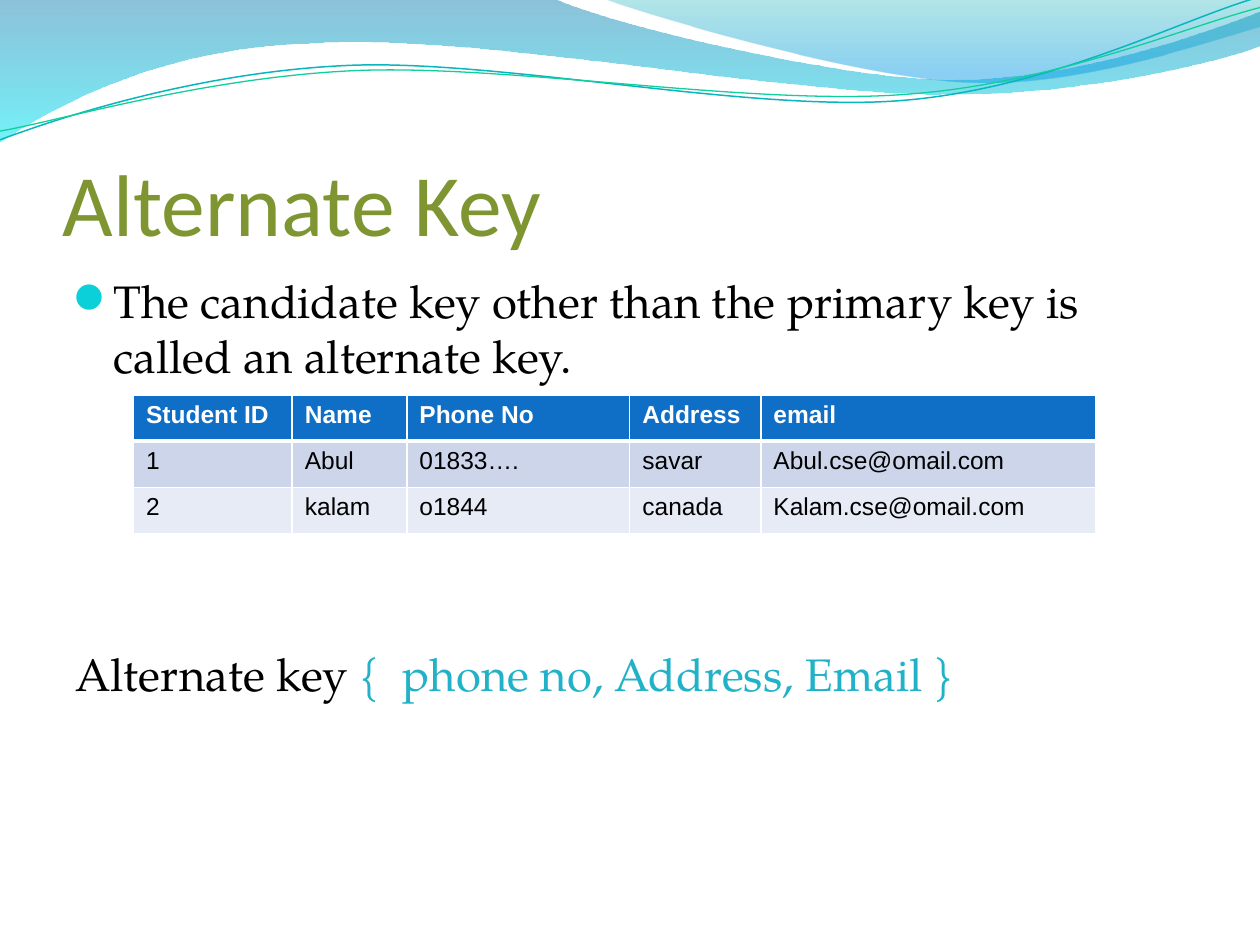
from lxml.etree import SubElement
from pptx import Presentation
from pptx.dml.color import RGBColor
from pptx.enum.text import MSO_ANCHOR
from pptx.oxml import parse_xml
from pptx.oxml.ns import nsdecls, qn
from pptx.util import Pt

# Outlines: two numbers are a point, six numbers a cubic curve.
WAVE_BAND = [(0, 0), (316.8, -0.7),
             (342.7, 12.2, 478.1, 45.4, 545.8, 45.4),
             (614.2, 45.4, 689.8, 18.7, 720, 6.5), (720.7, 25.9),
             (707.8, 31.7, 626.4, 54.7, 537.1, 54),
             (447.8, 54, 275, 20.2, 185, 24.5),
             (92.9, 25.9, 33.1, 59.8, -0.7, 81.4)]
WAVE_CORNER = [(344.9, -0.7), (366.5, 7.9, 491, 44.6, 553.7, 46.8),
               (616.3, 49.7, 691.9, 23, 720, 15.1), (720, 0)]
WAVE_LINES = [
    ("09B6BE", 0.85, [(0, 79.9), (34.6, 67, 113.8, 41, 199.4, 37.4),
                      (284.4, 33.8, 427, 64.1, 513.4, 57.6),
                      (599.8, 51.1, 675.4, 10.8, 718.6, -1.4)]),
    ("10CF9B", 0.75, [(0, 74.9), (33.8, 69.1, 118.1, 43.9, 203.8, 40.3),
                      (290.2, 36.7, 429.8, 60.5, 516.2, 54),
                      (601.9, 48.2, 677.5, 15.1, 720, 4.3)]),
]
STUDENTS = [
    ("Student ID", "Name", "Phone No", "Address", "email"),
    ("1", "Abul", "01833….", "savar", "Abul.cse@omail.com"),
    ("2", "kalam", "o1844", "canada", "Kalam.cse@omail.com"),
]
COLUMN_WIDTHS = (90.7, 65.5, 127.4, 74.9, 191.5)


def rgb(value):
    return RGBColor.from_string(value)


class SlideBuilder:
    TITLE_FONT, BODY_FONT, TABLE_FONT = "Calibri", "TeX Gyre Pagella", "Arial"
    TITLE, TEXT, ACCENT, BULLET = "7E9532", "000000", "21B2C8", "0BD0D9"
    WHITE = "FFFFFF"
    ROW_FILLS = ("0F6FC6", "CCD5EA", "E7EBF5")

    def __init__(self, slide):
        self.slide = slide

    def freeform(self, outline, close):
        """Lay all points as line segments, then join each curve's three into one."""
        start, *points = [(Pt(part[i]), Pt(part[i + 1]))
                          for part in outline for i in range(0, len(part), 2)]
        builder = self.slide.shapes.build_freeform(*start)
        builder.add_line_segments(points, close=close)
        sp = builder.convert_to_shape()
        sp.shadow.inherit = False
        segments = iter(list(sp.element.iter(qn("a:lnTo"))))
        for part in outline[1:]:
            first = next(segments)
            if len(part) == 6:
                curve = parse_xml(f'<a:cubicBezTo {nsdecls("a")}/>')
                first.addprevious(curve)
                for segment in (first, next(segments), next(segments)):
                    curve.append(segment[0])
                    segment.getparent().remove(segment)
        return sp

    def wave_fill(self, outline, stops):
        """Draw a closed wave with a downward gradient of (position, colour, opacity)."""
        sp = self.freeform(outline, True)
        sp.line.fill.background()
        gs = "".join(
            f'<a:gs pos="{pos * 1000}"><a:srgbClr val="{color}">'
            f'<a:alpha val="{alpha * 1000}"/></a:srgbClr></a:gs>'
            for pos, color, alpha in stops)
        grad = parse_xml(f'<a:gradFill {nsdecls("a")} rotWithShape="1"><a:gsLst>{gs}</a:gsLst>'
                         '<a:lin ang="5400000" scaled="0"/></a:gradFill>')
        sp.element.spPr.find(qn("a:custGeom")).addnext(grad)

    def wave_line(self, outline, color, width):
        sp = self.freeform(outline, False)
        sp.fill.background()
        sp.line.color.rgb = rgb(color)
        sp.line.width = Pt(width)

    def text_frame(self, left, top, width, height, side_inset, anchor):
        sp = self.slide.shapes.add_textbox(Pt(left), Pt(top), Pt(width), Pt(height))
        tf = sp.text_frame
        tf.word_wrap = True
        tf.margin_left = tf.margin_right = Pt(side_inset)
        tf.vertical_anchor = anchor
        return tf

    def style(self, r, font, size, color, bold=False):
        r.font.name, r.font.size, r.font.bold = font, Pt(size), bold
        r.font.color.rgb = rgb(color)

    def title(self, text):
        tf = self.text_frame(36, 55.4, 648, 90, 0, MSO_ANCHOR.BOTTOM)
        tf.margin_bottom = 0
        tf.text = text
        self.style(tf.paragraphs[0].runs[0], self.TITLE_FONT, 50, self.TITLE)

    def body(self, definition, label, keys):
        tf = self.text_frame(36, 152.6, 648, 345.6, 7.2, MSO_ANCHOR.TOP)
        tf.text = definition
        p = tf.paragraphs[0]
        self.bullet(p)
        self.style(p.runs[0], self.BODY_FONT, 26, self.TEXT)
        p = tf.add_paragraph()
        p.space_before = Pt(150.5)
        for text, color in ((label, self.TEXT), (keys, self.ACCENT)):
            r = p.add_run()
            r.text = text
            self.style(r, self.BODY_FONT, 26, color)

    def bullet(self, p):
        pPr = p._p.get_or_add_pPr()
        pPr.set("marL", str(Pt(21.6)))
        pPr.set("indent", str(-Pt(21.6)))
        color = SubElement(pPr, qn("a:buClr"))
        SubElement(color, qn("a:srgbClr"), val=self.BULLET)
        SubElement(pPr, qn("a:buFont"), typeface=self.BODY_FONT)
        SubElement(pPr, qn("a:buChar"), char="⚫")

    def table(self, rows, widths, left, top, row_height):
        frame = self.slide.shapes.add_table(
            len(rows), len(widths), Pt(left), Pt(top),
            Pt(sum(widths)), Pt(row_height * len(rows)))
        table = frame.table
        for column, width in zip(table.columns, widths):
            column.width = Pt(width)
        for i, row in enumerate(rows):
            header = i == 0
            for j, text in enumerate(row):
                cell = table.cell(i, j)
                cell.text = text
                cell.fill.solid()
                cell.fill.fore_color.rgb = rgb(self.ROW_FILLS[i])
                self.style(cell.text_frame.paragraphs[0].runs[0], self.TABLE_FONT, 14,
                           self.WHITE if header else self.TEXT, header)
                self.borders(cell, top=3 if i == 1 else 1, bottom=3 if header else 1)

    def borders(self, cell, top, bottom):
        tcPr = cell._tc.get_or_add_tcPr()
        sides = (("L", 1), ("R", 1), ("T", top), ("B", bottom))
        for i, (side, width) in enumerate(sides):
            tcPr.insert(i, parse_xml(
                f'<a:ln{side} {nsdecls("a")} w="{Pt(width)}"><a:solidFill>'
                f'<a:srgbClr val="{self.WHITE}"/></a:solidFill></a:ln{side}>'))


def main():
    prs = Presentation()
    prs.slide_width, prs.slide_height = Pt(720), Pt(540)
    s = SlideBuilder(prs.slides.add_slide(prs.slide_layouts[6]))
    s.wave_fill(WAVE_BAND, [(0, "0079AD", 45), (100, "00E9F7", 55)])
    s.wave_fill(WAVE_CORNER, [(0, "00ABB4", 30), (80, "0099E4", 45), (100, "0099E4", 45)])
    for color, width, outline in WAVE_LINES:
        s.wave_line(outline, color, width)
    s.title("Alternate Key")
    s.body("The candidate key other than the primary key is called an alternate key.",
           "Alternate key ", "{  phone no, Address, Email }")
    s.table(STUDENTS, COLUMN_WIDTHS, 76.3, 225.7, 26.4)
    prs.save("out.pptx")


if __name__ == "__main__":
    main()
